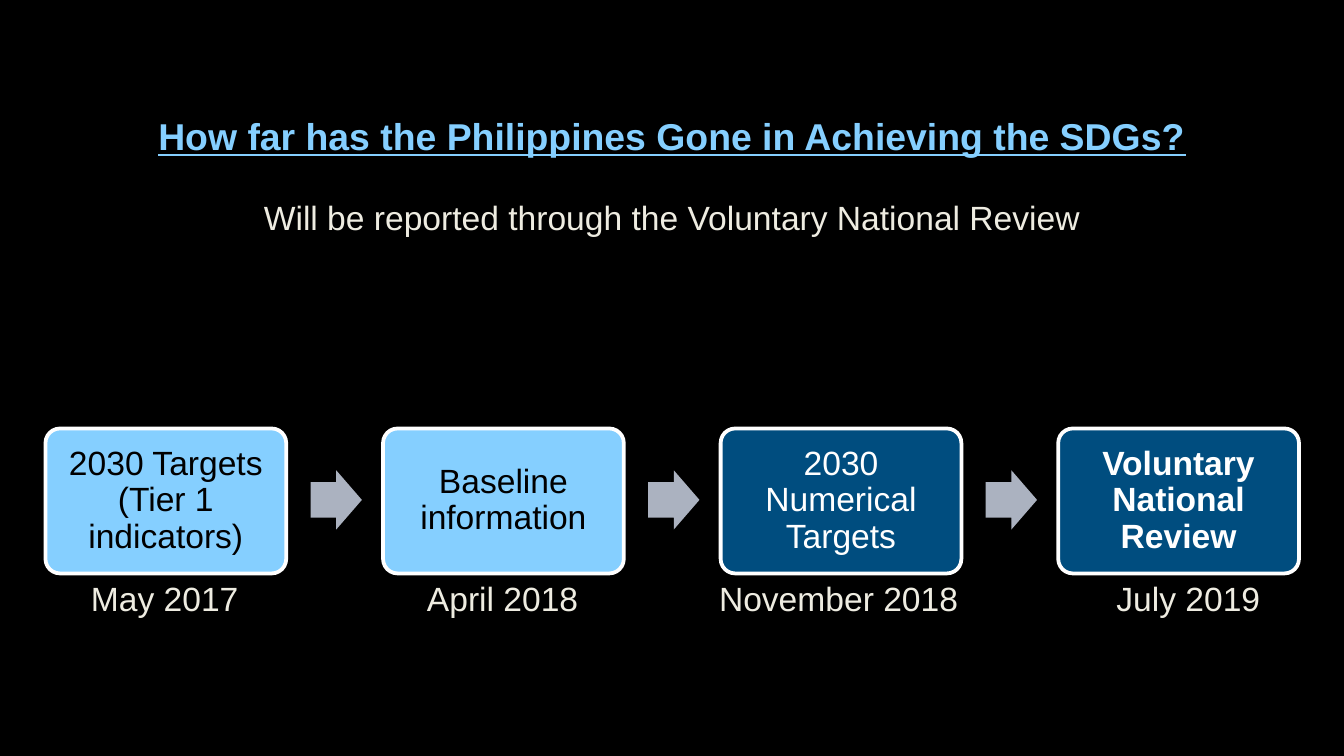
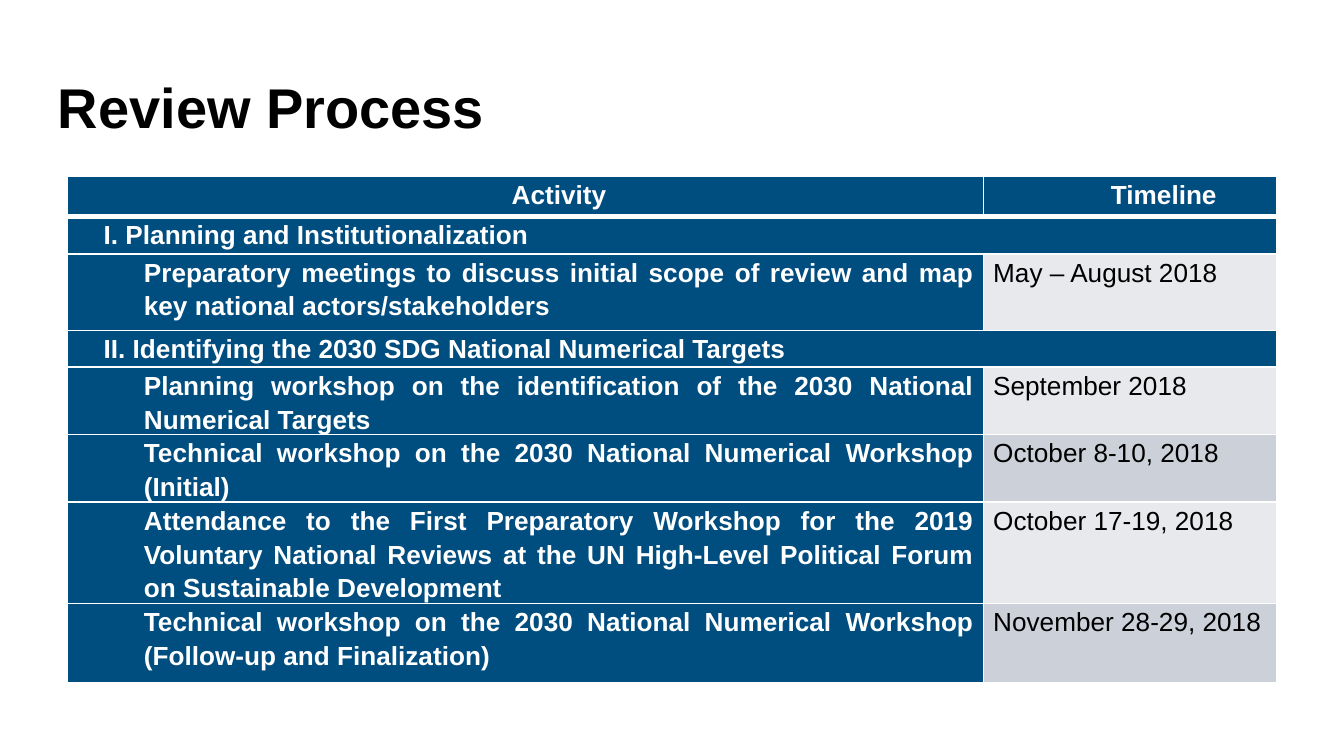
from dataclasses import dataclass
from typing import Optional

from lxml.etree import SubElement
from pptx import Presentation
from pptx.dml.color import RGBColor
from pptx.enum.shapes import MSO_SHAPE
from pptx.enum.text import MSO_ANCHOR, MSO_AUTO_SIZE, PP_ALIGN
from pptx.oxml.ns import qn
from pptx.util import Cm, Pt


@dataclass(frozen=True)
class Theme:
    font: str = "Arial"
    black: str = "000000"
    white: str = "FFFFFF"
    sky: str = "85CFFF"
    navy: str = "004D7F"
    cream: str = "EEECE1"
    arrow: str = "ABB2C0"
    light_band: str = "E7E9EC"
    dark_band: str = "CCD0D8"
    title_size: int = 30
    heading_size: int = 20
    body_size: int = 18
    table_size: int = 14


@dataclass(frozen=True)
class Box:
    """A rectangle in centimetres."""
    left: float
    top: float
    width: float
    height: float

    def lengths(self):
        return Cm(self.left), Cm(self.top), Cm(self.width), Cm(self.height)


@dataclass(frozen=True)
class Milestone:
    label: str
    fill: str
    color: str
    date: str
    date_left: float
    date_width: float
    bold: bool = False


@dataclass(frozen=True)
class Activity:
    """A table row; without a timeline it is a section heading."""
    text: str
    height: float
    timeline: Optional[str] = None
    band: str = ""


THEME = Theme()
SLIDE = Box(0, 0, 25.4, 14.29)

MILESTONES = (
    Milestone("2030 Targets (Tier 1 indicators)", THEME.sky, THEME.black,
              "May 2017", 1.47, 4.65),
    Milestone("Baseline information", THEME.sky, THEME.black,
              "April 2018", 7.82, 4.65),
    Milestone("2030 Numerical Targets", THEME.navy, THEME.white,
              "November 2018", 13.34, 5.38),
    Milestone("Voluntary National Review", THEME.navy, THEME.white,
              "July 2019", 20.85, 4.5, bold=True),
)
FIRST_MILESTONE = Box(0.86, 8.1, 4.55, 2.74)
FIRST_ARROW = Box(5.87, 8.89, 0.97, 1.12)
MILESTONE_STEP = 6.38

HEADER_HEIGHT = 0.76
COLUMN_WIDTHS = (17.32, 5.54)
ACTIVITIES = (
    Activity("I. Planning and Institutionalization", 0.71),
    Activity("Preparatory meetings to discuss initial scope of review and map "
             "key national actors/stakeholders", 1.45,
             "May – August 2018", THEME.light_band),
    Activity("II. Identifying the 2030 SDG National Numerical Targets", 0.69),
    Activity("Planning workshop on the identification of the 2030 National "
             "Numerical Targets", 0.69, "September 2018", THEME.light_band),
    Activity("Technical workshop on the 2030 National Numerical Workshop "
             "(Initial)", 0.76, "October 8-10, 2018", THEME.dark_band),
    Activity("Attendance to the First Preparatory Workshop for the 2019 "
             "Voluntary National Reviews at the UN High-Level Political Forum "
             "on Sustainable Development", 1.5,
             "October 17-19, 2018", THEME.light_band),
    Activity("Technical workshop on the 2030 National Numerical Workshop "
             "(Follow-up and Finalization)", 1.5,
             "November 28-29, 2018", THEME.dark_band),
)


def format_paragraph(paragraph, size: int, color: str, bold: bool = False,
                     align=PP_ALIGN.LEFT, line_spacing: float = 1.0) -> None:
    paragraph.alignment = align
    paragraph.line_spacing = line_spacing
    font = paragraph.font
    font.name = THEME.font
    font.size = Pt(size)
    font.bold = bold
    font.color.rgb = RGBColor.from_string(color)


def place_title(slide, box: Box, anchor):
    """Moves the title placeholder and returns its text frame."""
    title = slide.shapes.title
    title.left, title.top, title.width, title.height = box.lengths()
    frame = title.text_frame
    frame.word_wrap = True
    frame.auto_size = MSO_AUTO_SIZE.NONE
    frame.vertical_anchor = anchor
    return frame


def add_filled_shape(slide, kind, box: Box, fill: str,
                     line: Optional[str] = None):
    shape = slide.shapes.add_shape(kind, *box.lengths())
    shape.shadow.inherit = False
    shape.fill.solid()
    shape.fill.fore_color.rgb = RGBColor.from_string(fill)
    if line:
        shape.line.color.rgb = RGBColor.from_string(line)
        shape.line.width = Pt(2)
    else:
        shape.line.fill.background()
    return shape


def add_milestone(slide, milestone: Milestone, offset: float) -> None:
    first = FIRST_MILESTONE
    box = Box(first.left + offset, first.top, first.width, first.height)
    shape = add_filled_shape(slide, MSO_SHAPE.ROUNDED_RECTANGLE, box,
                             milestone.fill, THEME.white)
    shape.adjustments[0] = 0.1
    frame = shape.text_frame
    frame.word_wrap = True
    frame.vertical_anchor = MSO_ANCHOR.MIDDLE
    frame.margin_left = frame.margin_right = Cm(0.18)
    frame.margin_top = frame.margin_bottom = Cm(0.18)
    frame.text = milestone.label
    format_paragraph(frame.paragraphs[0], THEME.body_size, milestone.color,
                     milestone.bold, PP_ALIGN.CENTER, 0.9)

    date_box = Box(milestone.date_left, 10.8, milestone.date_width, 1.03)
    date_frame = slide.shapes.add_textbox(*date_box.lengths()).text_frame
    date_frame.word_wrap = True
    date_frame.text = milestone.date
    format_paragraph(date_frame.paragraphs[0], THEME.body_size, THEME.cream)


def add_arrow(slide, offset: float) -> None:
    first = FIRST_ARROW
    box = Box(first.left + offset, first.top, first.width, first.height)
    arrow = add_filled_shape(slide, MSO_SHAPE.RIGHT_ARROW, box, THEME.arrow)
    arrow.adjustments[0] = 0.6
    arrow.adjustments[1] = 0.5


def set_borders(cell, bottom_width: float) -> None:
    properties = cell._tc.get_or_add_tcPr()
    widths = {"a:lnL": 1, "a:lnR": 1, "a:lnT": 1, "a:lnB": bottom_width}
    for position, (tag, width) in enumerate(widths.items()):
        border = SubElement(properties, qn(tag), w=str(Pt(width)))
        fill = SubElement(border, qn("a:solidFill"))
        SubElement(fill, qn("a:srgbClr"), val=THEME.white)
        properties.insert(position, border)


def fill_cell(cell, text: str, fill: str, color: str = THEME.white,
              bold: bool = True, align=PP_ALIGN.JUSTIFY,
              hanging: float = 0, bottom_width: float = 1) -> None:
    cell.fill.solid()
    cell.fill.fore_color.rgb = RGBColor.from_string(fill)
    cell.margin_left = cell.margin_right = Cm(0.18)
    cell.margin_top = cell.margin_bottom = 0
    cell.text = text
    paragraph = cell.text_frame.paragraphs[0]
    properties = paragraph._p.get_or_add_pPr()
    properties.set("marL", str(Cm(1.27)))
    properties.set("indent", str(Cm(-hanging)))
    format_paragraph(paragraph, THEME.table_size, color, bold, align, 1.15)
    set_borders(cell, bottom_width)


def build_timeline_slide(presentation) -> None:
    slide = presentation.slides.add_slide(presentation.slide_layouts[5])
    backdrop = add_filled_shape(slide, MSO_SHAPE.RECTANGLE, SLIDE, THEME.black)
    slide.shapes._spTree.insert(2, backdrop._element)

    frame = place_title(slide, Box(1.27, 2.01, 22.86, 2.64), MSO_ANCHOR.TOP)
    frame.text = "How far has the Philippines Gone in Achieving the SDGs?"
    heading = frame.paragraphs[0]
    format_paragraph(heading, THEME.heading_size, THEME.sky, True,
                     PP_ALIGN.CENTER)
    heading.font.underline = True
    subtitle = frame.add_paragraph()
    subtitle.text = "Will be reported through the Voluntary National Review"
    subtitle.space_before = Pt(21)
    format_paragraph(subtitle, THEME.body_size, THEME.cream,
                     align=PP_ALIGN.CENTER)

    for index, milestone in enumerate(MILESTONES):
        offset = index * MILESTONE_STEP
        add_milestone(slide, milestone, offset)
        if index < len(MILESTONES) - 1:
            add_arrow(slide, offset)


def build_review_slide(presentation) -> None:
    slide = presentation.slides.add_slide(presentation.slide_layouts[5])
    frame = place_title(slide, Box(0.84, 0.48, 21.59, 3.07), MSO_ANCHOR.MIDDLE)
    frame.text = "Review Process"
    format_paragraph(frame.paragraphs[0], THEME.title_size, THEME.black, True)

    heights = [HEADER_HEIGHT] + [activity.height for activity in ACTIVITIES]
    box = Box(1.27, 3.33, sum(COLUMN_WIDTHS), sum(heights))
    table = slide.shapes.add_table(len(heights), len(COLUMN_WIDTHS),
                                   *box.lengths()).table
    for column, width in zip(table.columns, COLUMN_WIDTHS):
        column.width = Cm(width)
    for row, height in zip(table.rows, heights):
        row.height = Cm(height)

    for index, label in enumerate(("Activity", "Timeline")):
        fill_cell(table.cell(0, index), label, THEME.navy,
                  align=PP_ALIGN.CENTER, bottom_width=3)
    for index, activity in enumerate(ACTIVITIES, start=1):
        first, second = table.cell(index, 0), table.cell(index, 1)
        if activity.timeline is None:
            first.merge(second)
            fill_cell(first, activity.text, THEME.navy, hanging=0.76)
        else:
            fill_cell(first, activity.text, THEME.navy)
            fill_cell(second, activity.timeline, activity.band, THEME.black,
                      bold=False, hanging=1.27)


def main() -> None:
    presentation = Presentation()
    presentation.slide_width = Cm(SLIDE.width)
    presentation.slide_height = Cm(SLIDE.height)
    build_timeline_slide(presentation)
    build_review_slide(presentation)
    presentation.save("out.pptx")


if __name__ == "__main__":
    main()
